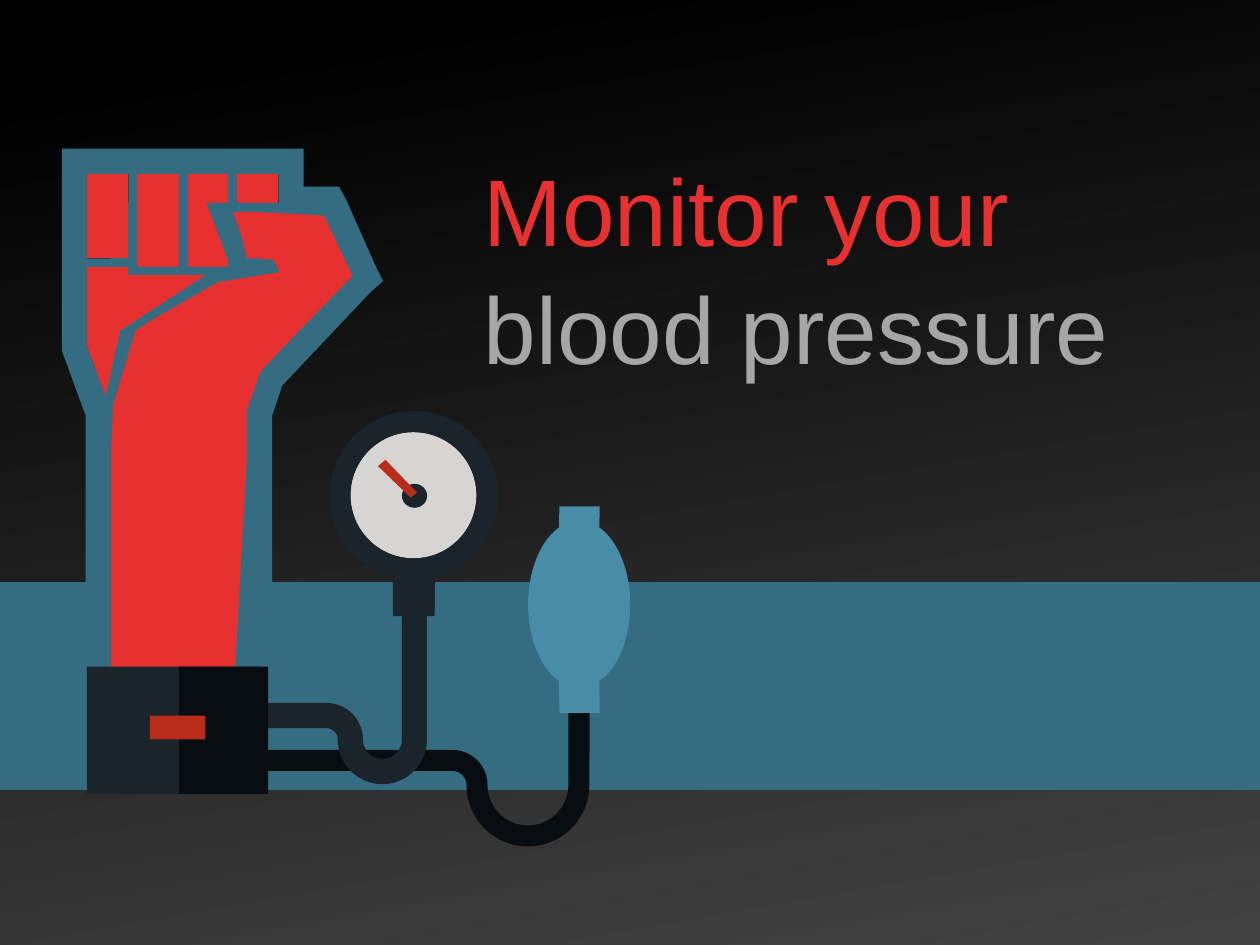
from math import cos, radians, sin

from pptx import Presentation
from pptx.dml.color import RGBColor
from pptx.enum.shapes import MSO_SHAPE
from pptx.util import Pt

RECT = MSO_SHAPE.RECTANGLE
OVAL = MSO_SHAPE.OVAL
TEAL, RED, DARK, BLACK, RUST = "346C81", "E63130", "1B242B", "080D11", "B92C1A"


def paint(shape, color):
    shape.fill.solid()
    shape.fill.fore_color.rgb = RGBColor.from_string(color)
    shape.line.fill.background()
    shape.shadow.inherit = False


def arc(x, y, radius_x, radius_y, start, end, steps=40):
    """Points along an elliptical arc; angles in degrees, clockwise from the right."""
    angles = [radians(start + (end - start) * i / steps) for i in range(steps + 1)]
    return [(x + radius_x * cos(a), y + radius_y * sin(a)) for a in angles]


deck = Presentation()
deck.slide_width, deck.slide_height = Pt(720), Pt(540)
page = deck.slides.add_slide(deck.slide_layouts[6])

# Background gradient
background = page.background.fill
background.gradient()
background.gradient_angle = 280
for stop, (position, color) in zip(background.gradient_stops,
                                   [(0.08, "000000"), (1, "434343")]):
    stop.position = position
    stop.color.rgb = RGBColor.from_string(color)

# Forearm backing and the band across the page
for left, top, width, height in [(54.7, 152.6, 92.2, 219.6), (0, 332.6, 720, 118.8)]:
    paint(page.shapes.add_shape(RECT, Pt(left), Pt(top), Pt(width), Pt(height)), TEAL)

# Title
box = page.shapes.add_textbox(Pt(269.3), Pt(77.8), Pt(444.2), Pt(138.2))
frame = box.text_frame
frame.word_wrap = True
frame.margin_top = Pt(6.5)
para = frame.paragraphs[0]
para.line_spacing = 1.04
para.font.size = Pt(54)
para.font.name = "Arial"
for words, color in [("Monitor your", RED), ("blood pressure", "A6A6A6")]:
    if para.runs:
        para.add_line_break()
    span = para.add_run()
    span.text = words
    span.font.color.rgb = RGBColor.from_string(color)

# Parts of the fist: each is a red piece and also an opening in the teal rim
heel = [(49.7, 152.6), (73.4, 152.6), (73.4, 157), (117.4, 157), (115.9, 158.4),
        (70.6, 187.9), (69.1, 188.6), (68.4, 190.8), (60.5, 226.8), (49.7, 198)]
little_finger = [(49.7, 99.4), (73.4, 99.4), (73.4, 147.6), (49.7, 147.6)]
ring_finger = [(78.5, 99.4), (102.2, 99.4), (102.2, 152.6), (78.5, 152.6)]
middle_finger = [(107.3, 99.4), (130.3, 99.4), (130.3, 115.9), (118.1, 115.9),
                 (130.3, 148.3), (130.3, 152.6), (107.3, 152.6)]
index_finger = [(135.4, 99.4), (159.1, 99.4), (159.1, 115.9), (135.4, 115.9)]
pieces = [heel, little_finger, index_finger, middle_finger, ring_finger]

thumb_and_arm = [(133.2, 121), (138.2, 135.4), (141.1, 148.3), (156.2, 148.3),
                 (159.8, 155.5), (124.6, 161.3), (77.8, 187.9), (64.8, 231.1),
                 (54.7, 411.1), (132.5, 415.4), (142.6, 235.4), (151.9, 213.1),
                 (160.6, 205.2), (178.6, 187.9), (207.4, 161.3), (197.3, 135.4),
                 (192.2, 123.8), (172.1, 122.4), (143.3, 121)]
rim = [(49, 415.4), (49, 429.8), (155.5, 429.8), (155.5, 237.6), (161.3, 220.3),
       (211.7, 167), (218.9, 160.6), (214.6, 151.9), (198, 114.5), (193.7, 106.6),
       (173.5, 106.6), (173.5, 85), (35.3, 85), (35.3, 200.2), (49, 237.6)]
arm_opening = [(201.6, 157.7), (174.2, 185.8), (157, 203.8), (149, 212.4),
               (141.1, 234.7), (141.1, 415.4), (63.4, 415.4), (63.4, 234.7),
               (73.4, 191.5), (118.8, 162), (153.4, 153.4), (149.8, 147.6),
               (134.6, 147.6), (131, 135.4), (124.6, 121), (163.4, 121),
               (184.3, 121), (184.3, 121.2)]

# Hoses: a quarter bend that runs into a half-turn, both sides of the tube
hoses = []
for start_x, bend_x, bend_y, outer, inner, turn_x in [
        (149.8, 258.6, 448.6, 20, 8, 301.7), (144, 186.5, 422.6, 20.9, 6.5, 218.5)]:
    turn_inner = turn_x - bend_x - outer
    turn_outer = turn_x - bend_x - inner
    hoses.append(arc(turn_x, bend_y, turn_inner, turn_inner, 0, 180)
                 + arc(bend_x, bend_y, outer, outer, 0, -90)
                 + [(start_x, bend_y - outer), (start_x, bend_y - inner)]
                 + arc(bend_x, bend_y, inner, inner, -90, 0)
                 + arc(turn_x, bend_y, turn_outer, turn_outer, 180, 0))
bulb_hose = hoses[0] + [(337, 407.5), (324.8, 407.5)]
gauge = (arc(236.5, 283, 48.2, 48.2, 75.5, -255.5, 90)
         + [(224.6, 352.1), (229.6, 352.1)] + hoses[1]
         + [(244, 352.1), (248.4, 352.1)])
gauge_opening = arc(236.5, 283, 36.2, 36.2, 0, 360, 90)

bulb = ([(319.7, 289.4), (342.7, 289.4)] + arc(331, 345.4, 29.2, 47.8, -66.7, 66.7)
        + [(342.7, 407.5), (319.7, 407.5)] + arc(331, 345.4, 29.2, 47.8, 113.3, 246.7))
needle = [(234.7, 284.4), (216, 266.4), (220.3, 262.8), (238.3, 281.5)]

# Drawing, back to front: presets as (kind, bounds), outlines as lists of contours
art = page.shapes.add_group_shape().shapes
parts = [(TEAL, RECT, (63.4, 115.9, 133.9, 55.4))]
parts += [(RED, None, [piece]) for piece in pieces]
parts += [
    (RED, None, [thumb_and_arm]),
    (TEAL, None, [rim, arm_opening] + pieces),
    ("D7D5D4", OVAL, (200.2, 247, 72, 72)),
    ("488CA7", None, [bulb]),
    (BLACK, None, [bulb_hose]),
    (DARK, None, [gauge, gauge_opening]),
    (DARK, OVAL, (229.7, 276.5, 14.4, 13.7)),
    (DARK, RECT, (49.7, 380.9, 98.6, 72.7)),
    (BLACK, RECT, (102.2, 380.9, 51.1, 72.7)),
    (RUST, None, [needle]),
    (RUST, RECT, (85.7, 408.9, 31.7, 13.7)),
]
for color, kind, geometry in parts:
    if kind is not None:
        shape = art.add_shape(kind, *[Pt(length) for length in geometry])
    else:
        contours = [[(Pt(x), Pt(y)) for x, y in contour] for contour in geometry]
        builder = art.build_freeform(*contours[0][0])
        builder.add_line_segments(contours[0][1:])
        for contour in contours[1:]:
            builder.move_to(*contour[0])
            builder.add_line_segments(contour[1:])
        shape = builder.convert_to_shape()
    paint(shape, color)

deck.save("out.pptx")
